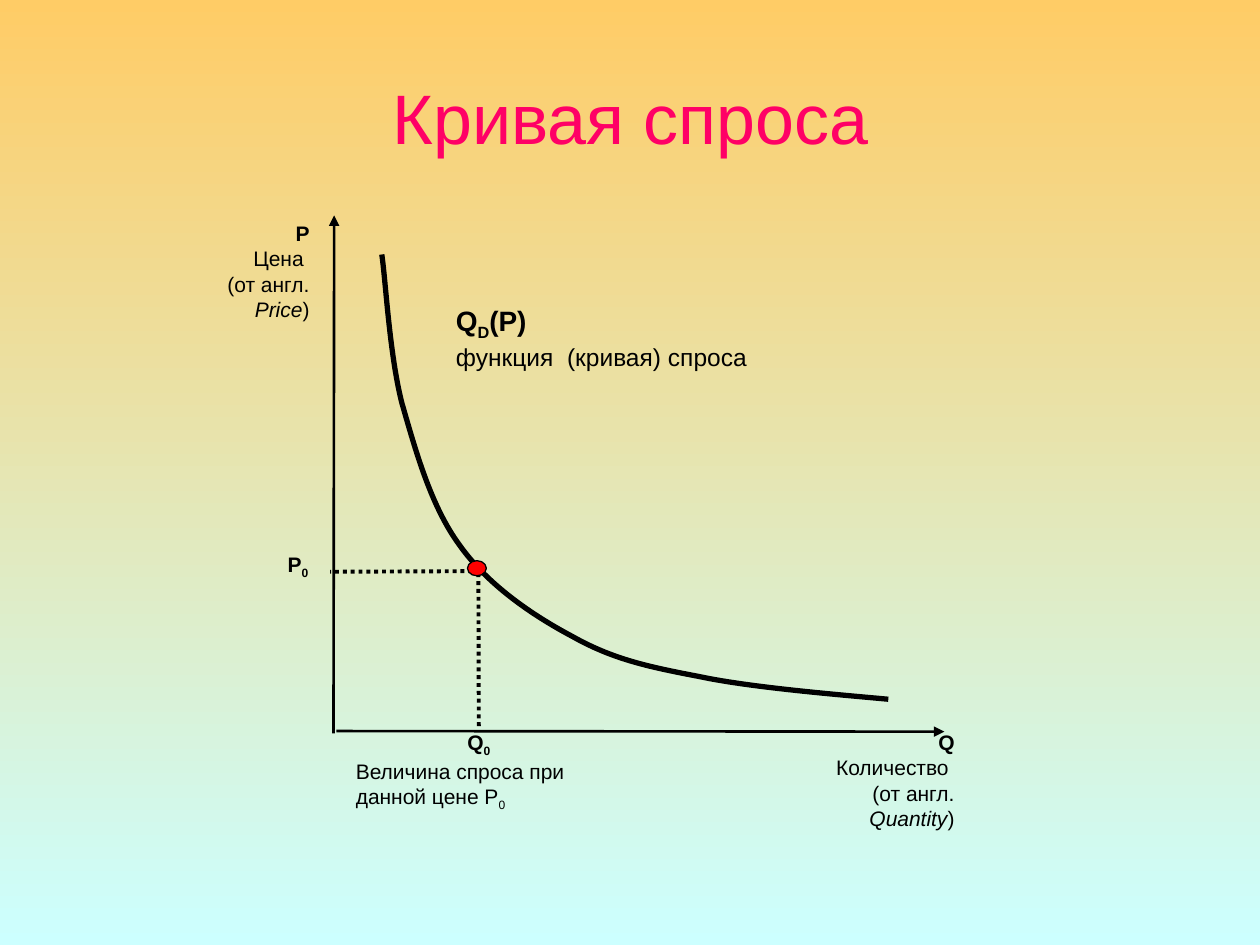
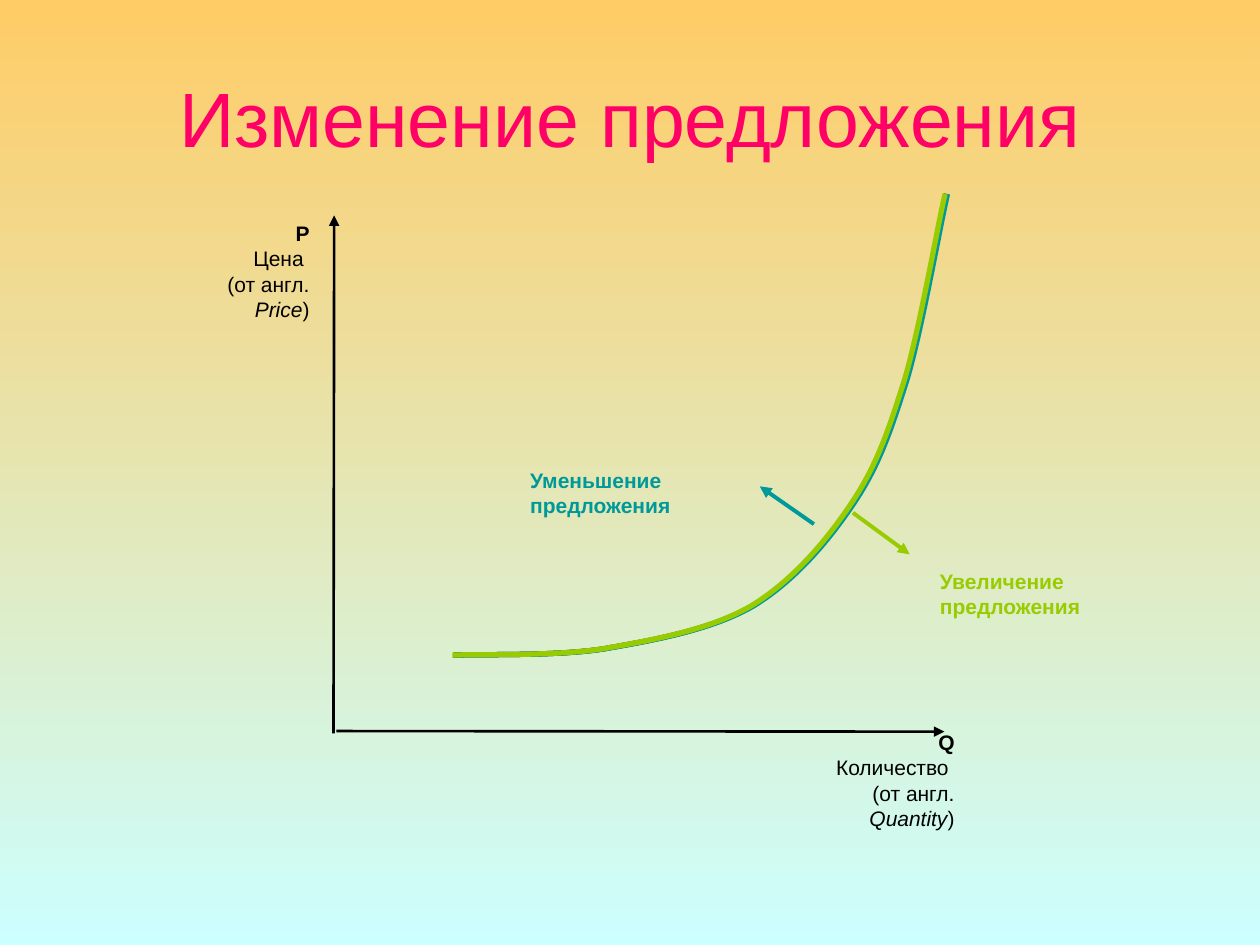
from pptx import Presentation
from pptx.dml.color import RGBColor as Rgb
from pptx.enum.dml import MSO_LINE as Dash
from pptx.enum.shapes import MSO_CONNECTOR as Link, MSO_SHAPE as Form
from pptx.enum.text import MSO_ANCHOR as Anchor, PP_ALIGN as Align
from pptx.oxml.ns import qn
from pptx.util import Inches, Pt
from lxml.etree import SubElement as Sub

HUES = {"top": "FFCC66", "base": "CCFFFF", "title": "FF0066", "ink": "000000",
        "dot": "FF0000", "less": "009999", "more": "99CC00"}
FONT = "Arial"
COLS, ROWS = 100, 75  # grid of square cells over the slide
CELL = Inches(10) // COLS

# Start point, then three Bezier points for each span, in cells
DEMAND = [(30.3, 20.2),
          (30.6, 22.1), (30.9, 28.1), (31.9, 32),
          (33, 35.8), (34.2, 40.2), (36.5, 43.3),
          (38.7, 46.4), (42.2, 48.8), (45.4, 50.5),
          (48.6, 52.3), (51.3, 52.9), (55.5, 53.7),
          (59.7, 54.6), (67.3, 55.2), (70.5, 55.5)]
SUPPLY = [(36, 52),
          (38, 51.9), (44, 52.1), (47.9, 51.5),
          (51.9, 50.8), (56.4, 50), (59.7, 48.1),
          (63, 46.1), (65.7, 42.9), (67.7, 39.9),
          (69.7, 36.9), (70.6, 34.2), (71.9, 30.1),
          (73.1, 26), (74.4, 18.5), (75.1, 15.4)]


def hue(name):
    return Rgb.from_string(HUES[name])


def grid(*cells):
    return [round(n * CELL) for n in cells]


def run(text, bold=False, italic=False, sub=False, size=12):
    return text, bold, italic, sub, size


def label(slide, box, paras, align=Align.LEFT, color="ink", anchor=Anchor.TOP):
    """Text box; paras is a list of run lists, align one value or one per paragraph."""
    frame = slide.shapes.add_textbox(*grid(*box)).text_frame
    frame.word_wrap = True
    frame.vertical_anchor = anchor
    sides = align if isinstance(align, list) else [align] * len(paras)
    for i, (runs, side) in enumerate(zip(paras, sides)):
        para = frame.paragraphs[0] if i == 0 else frame.add_paragraph()
        para.alignment = side
        for text, bold, italic, sub, size in runs:
            part = para.add_run()
            part.text = text
            font = part.font
            font.name, font.size = FONT, Pt(size)
            font.bold, font.italic = bold, italic
            font.color.rgb = hue(color)
            if sub:
                part._r.get_or_add_rPr().set("baseline", "-25000")


def stroke(shape, color, width):
    shape.line.color.rgb = hue(color)
    shape.line.width = Pt(width)


def line(slide, start, end, color="ink", width=1.5, arrow=True):
    """Arrow, or a dotted guide when arrow is False."""
    link = slide.shapes.add_connector(Link.STRAIGHT, *grid(*start, *end))
    stroke(link, color, width)
    if arrow:
        Sub(link.line._get_or_add_ln(), qn("a:tailEnd"), type="triangle")
    else:
        link.line.dash_style = Dash.ROUND_DOT
    Sub(link._element.spPr, qn("a:effectLst"))


def smooth(shape):
    """Turn each three straight pieces into one Bezier span."""
    trace = next(shape._element.iter(qn("a:path")))
    legs = trace.findall(qn("a:lnTo"))
    for i in range(0, len(legs), 3):
        span = Sub(trace, qn("a:cubicBezTo"))
        for leg in legs[i:i + 3]:
            span.append(leg[0])
            trace.remove(leg)


def curve(slide, knots, color="ink", shift=0):
    spots = [grid(x + shift, y) for x, y in knots]
    pen = slide.shapes.build_freeform(*spots[0], scale=1.0)
    pen.add_line_segments(spots[1:], close=False)
    shape = pen.convert_to_shape()
    smooth(shape)
    shape.shadow.inherit = False
    shape.fill.background()
    stroke(shape, color, 3)


def dot(slide, box):
    shape = slide.shapes.add_shape(Form.OVAL, *grid(*box))
    shape.shadow.inherit = False
    shape.fill.solid()
    shape.fill.fore_color.rgb = hue("dot")
    stroke(shape, "ink", 0.75)


def axis(slide, start, end, box, sign, name, word):
    line(slide, start, end)
    label(slide, box, [[run(sign, bold=True)], [run(name)], [run("(от англ.")],
                       [run(word, italic=True), run(")")]], Align.RIGHT)


def graph(deck, title, size):
    """Slide with the title and both axes."""
    slide = deck.slides.add_slide(deck.slide_layouts[6])
    label(slide, (5, 3, 90.05, 12.5), [[run(title, size=size)]],
          Align.CENTER, "title", Anchor.MIDDLE)
    axis(slide, (26.47, 58.2), (26.52, 17.1), (15.35, 17.03, 10.2, 11.7),
         "P", "Цена ", "Price")
    axis(slide, (26.7, 58.02), (74.95, 58.07), (60.65, 57.43, 16.1, 10.2),
         "Q", "Количество ", "Quantity")
    return slide


def paint(deck):
    fill = deck.slide_master.background.fill
    fill.gradient()
    fill.gradient_angle = 270
    for stop, name in zip(fill.gradient_stops, ("top", "base")):
        stop.color.rgb = hue(name)


def demand(deck):
    slide = graph(deck, "Кривая спроса", 40)
    curve(slide, DEMAND)
    # Guides from the point to both axes
    line(slide, (37.97, 45.5), (38, 57.8), width=2.25, arrow=False)
    line(slide, (38.1, 45.33), (26.2, 45.38), width=2.25, arrow=False)
    # Labels, with the point between them
    label(slide, (27.25, 57.4, 21.5, 10.8),
          [[run("Q", bold=True), run("0", bold=True, sub=True)],
           [run("Величина спроса при данной цене P"), run("0", sub=True)]],
          [Align.CENTER, Align.LEFT])
    label(slide, (19.6, 43.24, 8.1, 4.1),
          [[run("P", bold=True), run("0", bold=True, sub=True)]], Align.CENTER)
    dot(slide, (37.1, 44.5, 1.5, 1.2))
    label(slide, (35.2, 23.6, 26, 6.1),
          [[run("Q", bold=True, size=16), run("D", bold=True, sub=True, size=16),
            run("(P)", bold=True, size=16)],
           [run("функция  (кривая) спроса", size=14)]])


def supply(deck):
    slide = graph(deck, "Изменение предложения", 44)
    for color, shift in (("ink", 0), ("less", 0.1), ("more", -0.1)):
        curve(slide, SUPPLY, color, shift)
    # Direction of each change with its label
    for color, start, end, box, text in (
            ("more", (67.7, 40.7), (72.2, 44), (73.62, 44.6, 13.5, 5),
             "Увеличение предложения"),
            ("less", (64.6, 41.6), (60.3, 38.6), (41.1, 36.6, 14.1, 5),
             "Уменьшение предложения")):
        line(slide, start, end, color, 2.25)
        label(slide, box, [[run(text, bold=True)]], color=color)


def main():
    deck = Presentation()
    deck.slide_width, deck.slide_height = COLS * CELL, ROWS * CELL
    paint(deck)
    demand(deck)
    supply(deck)
    deck.save("out.pptx")


if __name__ == "__main__":
    main()
